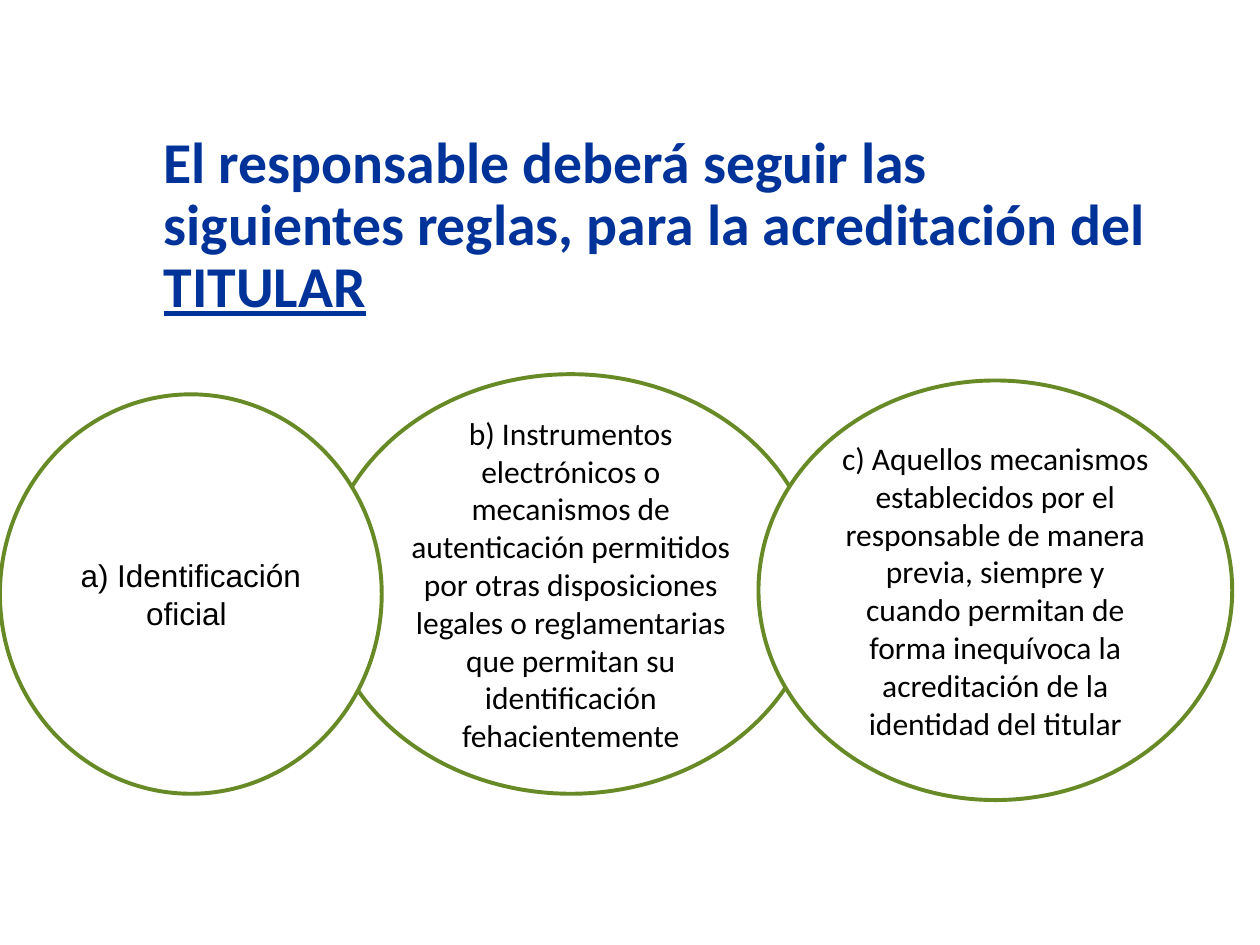
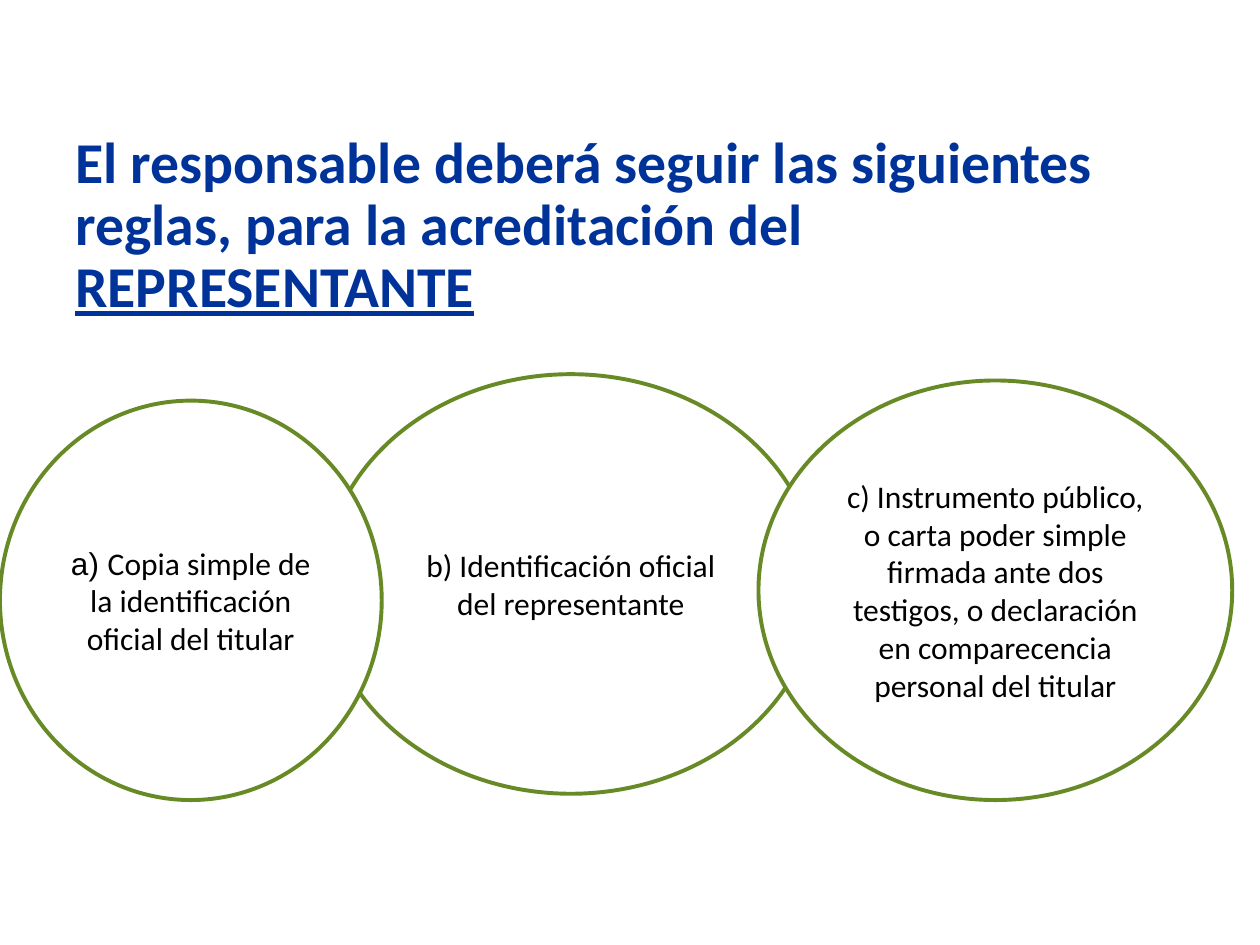
import pptx
import pptx.dml.color
import pptx.enum.shapes
import pptx.enum.text
import pptx.util
from dataclasses import dataclass

# Content: title words and the three rules of each slide, as (text, font) runs
LEAD = "El responsable deberá seguir las siguientes reglas, para la acreditación del "
SLIDES = [
    {
        "who": "TITULAR",
        "title_left": 1.2,
        "first_top": 3.13,
        "a": [("a) Identificación oficial ", "Arial")],
        "b": [("b) Instrumentos electrónicos o mecanismos de autenticación "
               "permitidos por otras disposiciones legales o reglamentarias "
               "que permitan su identificación fehacientemente", "Calibri")],
        "c": [("c) Aquellos mecanismos establecidos por el responsable de "
               "manera previa, siempre y cuando permitan de forma inequívoca "
               "la acreditación de la identidad del titular", "Calibri")],
    },
    {
        "who": "REPRESENTANTE",
        "title_left": 0.5,
        "first_top": 3.18,
        "a": [("a) ", "Arial"),
              ("Copia simple de la identificación oficial del titular", "Calibri")],
        "b": [("b) Identificación oficial del representante", "Calibri")],
        "c": [("c) Instrumento público, o carta poder simple firmada ante dos "
               "testigos, o declaración en comparecencia personal del titular",
               "Calibri")],
    },
]

# Grid of 10 columns by 7.5 rows
COLS, ROWS = 10, 7.5
TITLE_TOP, TITLE_RIGHT, TITLE_ROWS = 0.74, 9.31, 2.12
# Ellipses from back to front: left, top, columns, rows (a top of None varies)
ELLIPSES = {
    "b": (2.57, 2.97, 3.92, 3.33),
    "a": (0, None, 3.03, 3.17),
    "c": (6.02, 3.02, 3.76, 3.33),
}


@dataclass(frozen=True)
class Theme:
    title: str = "003399"
    text: str = "000000"
    fill: str = "FFFFFF"
    outline: str = "678A26"
    title_font: str = "Calibri"
    title_size: int = 33
    body_size: int = 18
    outline_width: float = 2.25


THEME = Theme()
ANCHOR_MIDDLE = pptx.enum.text.MSO_ANCHOR.MIDDLE


def rgb(code):
    return pptx.dml.color.RGBColor.from_string(code)


def place(prs, left, top, cols, rows):
    """Turn grid columns and rows into slide lengths."""
    col, row = prs.slide_width / COLS, prs.slide_height / ROWS
    return [pptx.util.Emu(round(v))
            for v in (left * col, top * row, cols * col, rows * row)]


def open_paragraph(shape, size, color):
    tf = shape.text_frame
    tf.word_wrap = True
    tf.vertical_anchor = ANCHOR_MIDDLE
    p = tf.paragraphs[0]
    p.font.size = pptx.util.Pt(size)
    p.font.color.rgb = rgb(color)
    return p


def add_title(prs, s, left, who):
    box = s.shapes.add_textbox(
        *place(prs, left, TITLE_TOP, TITLE_RIGHT - left, TITLE_ROWS))
    p = open_paragraph(box, THEME.title_size, THEME.title)
    p.line_spacing = 0.9
    p.font.name = THEME.title_font
    p.font.bold = True
    p.add_run().text = LEAD
    r = p.add_run()
    r.text = who
    r.font.underline = True


def add_rule(prs, s, area, runs):
    sp = s.shapes.add_shape(
        pptx.enum.shapes.MSO_SHAPE.OVAL, *place(prs, *area))
    sp.shadow.inherit = False
    sp.fill.solid()
    sp.fill.fore_color.rgb = rgb(THEME.fill)
    sp.line.color.rgb = rgb(THEME.outline)
    sp.line.width = pptx.util.Pt(THEME.outline_width)
    p = open_paragraph(sp, THEME.body_size, THEME.text)
    p.alignment = pptx.enum.text.PP_ALIGN.CENTER
    p.font.name = runs[0][1]
    for text, font in runs:
        r = p.add_run()
        r.text = text
        if font != runs[0][1]:
            r.font.name = font


def main():
    prs = pptx.Presentation()
    prs.slide_width = pptx.util.Inches(10)
    prs.slide_height = pptx.util.Inches(7.5)
    for content in SLIDES:
        s = prs.slides.add_slide(prs.slide_layouts[6])
        add_title(prs, s, content["title_left"], content["who"])
        for key, (left, top, cols, rows) in ELLIPSES.items():
            if top is None:
                top = content["first_top"]
            add_rule(prs, s, (left, top, cols, rows), content[key])
    prs.save("out.pptx")


if __name__ == "__main__":
    main()
